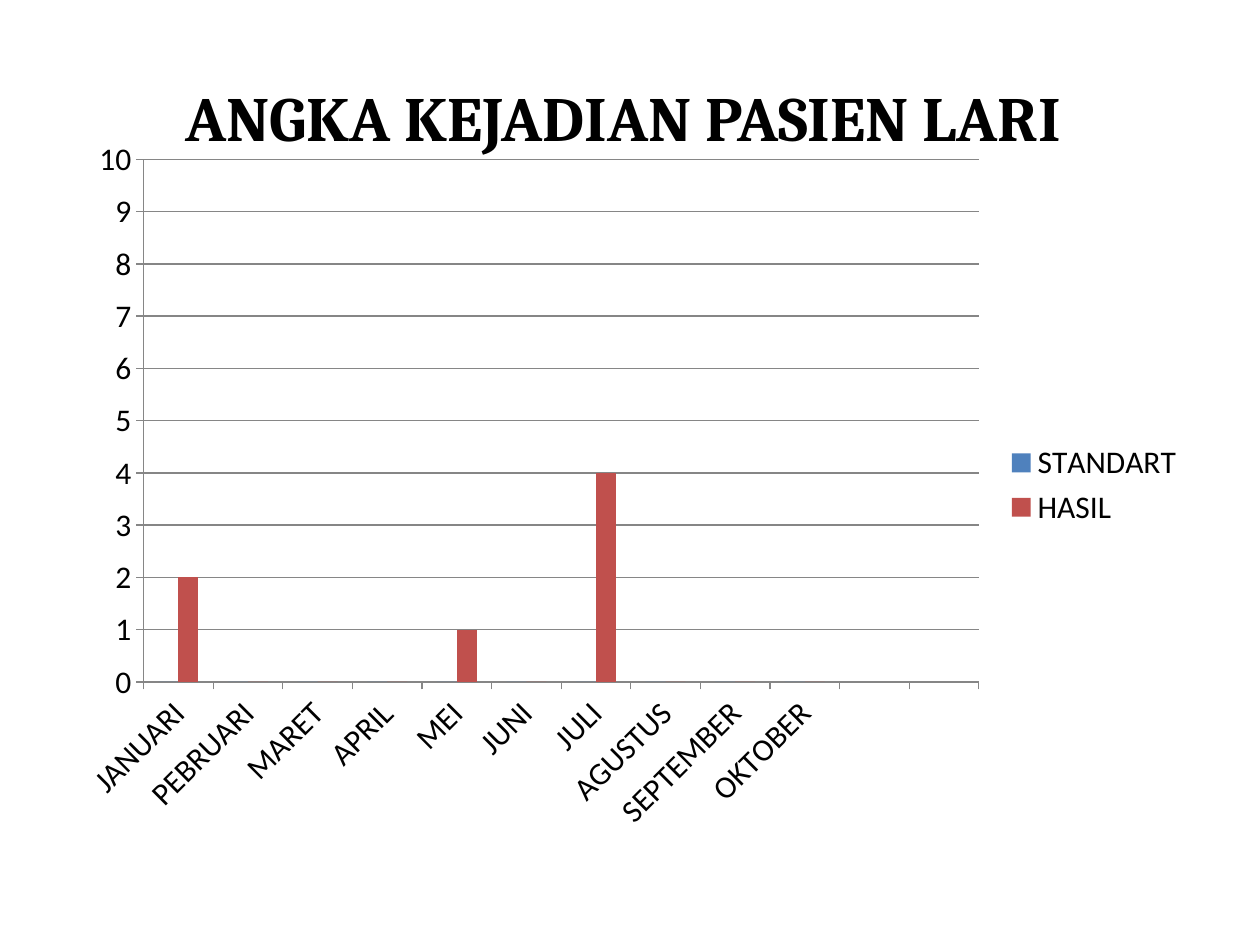
from dataclasses import dataclass

from pptx import Presentation
from pptx.chart.data import CategoryChartData
from pptx.dml.color import RGBColor
from pptx.enum.chart import XL_CHART_TYPE, XL_LEGEND_POSITION, XL_TICK_MARK
from pptx.enum.text import MSO_ANCHOR, PP_ALIGN
from pptx.util import Pt

CLUSTERED = XL_CHART_TYPE.COLUMN_CLUSTERED
LEGEND_RIGHT = XL_LEGEND_POSITION.RIGHT
TICK_OUT = XL_TICK_MARK.OUTSIDE
TICK_NONE = XL_TICK_MARK.NONE
MIDDLE = MSO_ANCHOR.MIDDLE
CENTER = PP_ALIGN.CENTER


@dataclass(frozen=True)
class Theme:
    ink: RGBColor = RGBColor(0, 0, 0)
    rule: RGBColor = RGBColor(0x86, 0x86, 0x86)
    standard: RGBColor = RGBColor(0x4F, 0x81, 0xBD)
    result: RGBColor = RGBColor(0xC0, 0x50, 0x4D)
    heading_font: str = "Cambria"
    body_font: str = "Calibri"
    heading_size: int = 36
    body_size: int = 18


THEME = Theme()
MONTHS = ["JANUARI", "PEBRUARI", "MARET", "APRIL", "MEI", "JUNI", "JULI",
          "AGUSTUS", "SEPTEMBER", "OKTOBER", "", ""]
INCIDENTS = {
    "STANDART": ([0] * 10 + [None] * 2, THEME.standard),
    "HASIL": ([2, 0, 0, 0, 1, 0, 4, 0, 0, 0, None, None], THEME.result),
}


def apply(target, values):
    for attribute, value in values.items():
        setattr(target, attribute, value)


def style_font(font, name, size, bold):
    apply(font, {"name": name, "size": Pt(size), "bold": bold})
    font.color.rgb = THEME.ink


def style_rule(line):
    line.width = Pt(0.75)
    line.color.rgb = THEME.rule


def add_heading(slide, wording):
    heading = slide.shapes.add_textbox(Pt(36), Pt(21.6), Pt(648), Pt(90))
    frame = heading.text_frame
    apply(frame, {"word_wrap": True, "vertical_anchor": MIDDLE})
    paragraph = frame.paragraphs[0]
    paragraph.alignment = CENTER
    run = paragraph.add_run()
    run.text = wording
    style_font(run.font, THEME.heading_font, THEME.heading_size, True)


def style_axes(chart):
    months, counts = chart.category_axis, chart.value_axis
    for axis in (months, counts):
        apply(axis, {"major_tick_mark": TICK_OUT, "minor_tick_mark": TICK_NONE})
        style_font(axis.tick_labels.font, THEME.body_font, THEME.body_size, False)
        style_rule(axis.format.line)
    apply(months, {"has_major_gridlines": False})
    apply(counts, {"minimum_scale": 0, "maximum_scale": 10, "major_unit": 1,
                   "has_major_gridlines": True})
    style_rule(counts.major_gridlines.format.line)
    label_body = months._element.txPr.bodyPr
    label_body.set("rot", "-2700000")
    label_body.set("vert", "horz")


def add_incident_chart(slide):
    incidents = CategoryChartData()
    incidents.categories = MONTHS
    for name, (counts, _) in INCIDENTS.items():
        incidents.add_series(name, counts)
    chart = slide.shapes.add_chart(
        CLUSTERED, Pt(36), Pt(72), Pt(648), Pt(410.4), incidents).chart
    apply(chart, {"has_title": False, "has_legend": True})
    style_font(chart.font, THEME.body_font, THEME.body_size, False)
    apply(chart.legend, {"position": LEGEND_RIGHT, "include_in_layout": False})
    plot = chart.plots[0]
    apply(plot, {"gap_width": 150, "overlap": 0, "vary_by_categories": False})
    for series, (_, color) in zip(plot.series, INCIDENTS.values()):
        series.invert_if_negative = False
        series.format.fill.solid()
        series.format.fill.fore_color.rgb = color
    style_axes(chart)


def main():
    deck = Presentation()
    apply(deck, {"slide_width": Pt(720), "slide_height": Pt(540)})
    slide = deck.slides.add_slide(deck.slide_layouts[6])
    add_heading(slide, "ANGKA KEJADIAN PASIEN LARI ")
    add_incident_chart(slide)
    deck.save("out.pptx")


if __name__ == "__main__":
    main()
